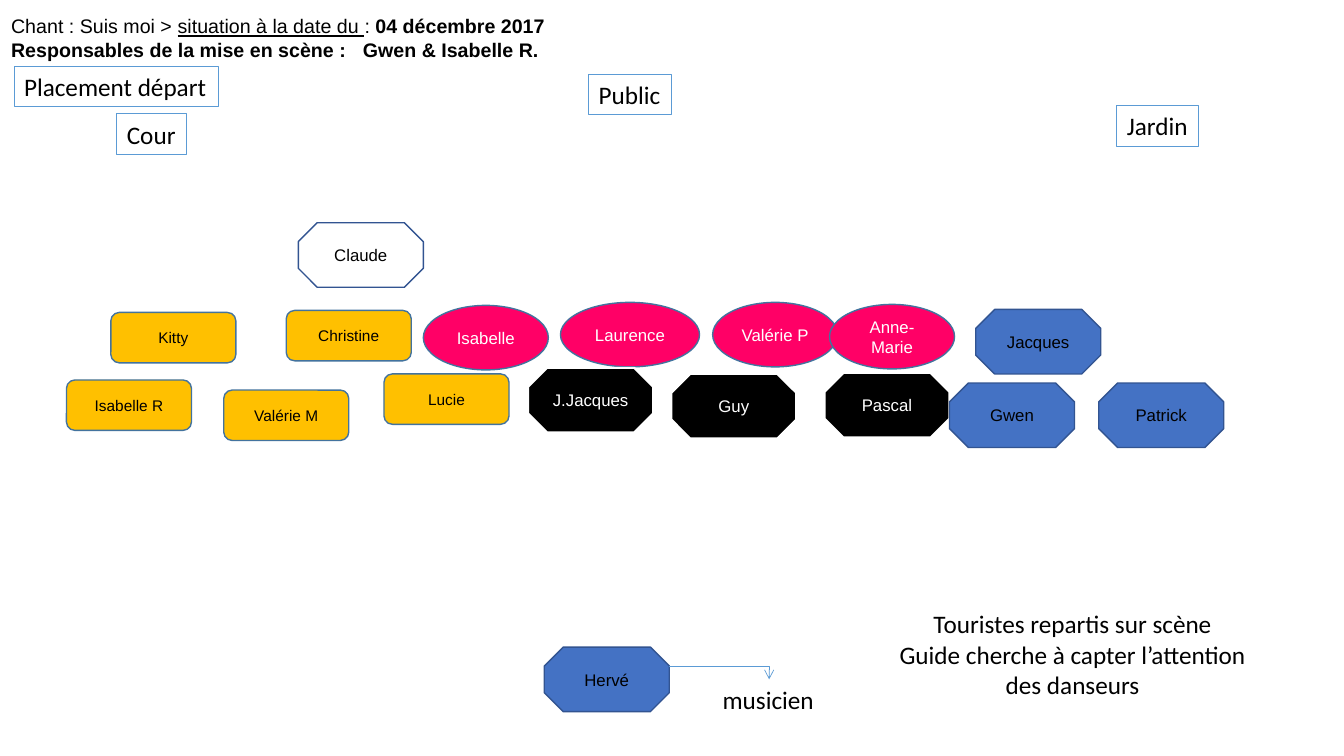
from collections import namedtuple

from lxml.etree import SubElement
from pptx import Presentation
from pptx.dml.color import RGBColor
from pptx.enum.shapes import MSO_CONNECTOR as Connector, MSO_SHAPE as Shape
from pptx.enum.text import MSO_ANCHOR as Anchor, MSO_AUTO_SIZE as AutoSize, PP_ALIGN as Align
from pptx.oxml.ns import qn
from pptx.util import Inches, Pt

COLUMNS, ROWS = 133.33, 75
CELL = Inches(0.1)

Box = namedtuple("Box", "col row cols rows")
Role = namedtuple("Role", "outline rows fill line line_width ink size")

SINGER = Role(Shape.ROUNDED_RECTANGLE, 5, "FFC000", "43739E", 1, "000000", 11)
LADY = Role(Shape.OVAL, 6.4, "FF0066", "43739E", 1, "FFFFFF", 12)
MAN_IN_BLACK = Role(Shape.OCTAGON, 6.4, "000000", "FFFFFF", 1.5, "FFFFFF", 12)
MAN_IN_BLUE = Role(Shape.OCTAGON, 6.4, "4472C4", "325491", 1, "000000", 12)
GUIDE = MAN_IN_BLUE._replace(fill="FFFFFF")
PERFORMER_COLS = 12.4

CAST = [
    (GUIDE, [("Claude", 23, 0)]),
    (SINGER, [("Kitty", 4.4, 8.9), ("Christine", 21.8, 8.7), ("Isabelle R", 0, 15.6),
              ("Valérie M", 15.6, 16.6), ("Lucie", 31.5, 15)]),
    (LADY, [("Isabelle", 35.4, 8.2), ("Laurence", 49, 7.9), ("Valérie P", 64.1, 7.9),
            ("Anne-Marie", 75.7, 8.1)]),
    (MAN_IN_BLACK, [("J.Jacques", 45.8, 14.4), ("Guy", 60, 15), ("Pascal", 75.2, 14.9)]),
    (MAN_IN_BLUE, [("Jacques", 90.2, 8.6), ("Gwen", 87.6, 15.9), ("Patrick", 102.4, 15.9)]),
]
WIDE_COLS = {"Laurence": 13.8}

SIGNS = [
    ("Placement départ", 1.4, 0, 20.3),
    ("Public", 58.4, 0.8, 8.2),
    ("Jardin", 110.8, 3.9, 8.1),
    ("Cour", 11.6, 4.7, 6.9),
]


def color(hex_code):
    return RGBColor.from_string(hex_code)


def grid(*cells):
    return [round(CELL * cell) for cell in cells]


def inside(box, col, row, cols, rows):
    return Box(box.col + col, box.row + row, cols, rows)


def style(paragraph, size, font_name, ink="000000", align=Align.LEFT):
    paragraph.alignment = align
    paragraph.font.size = Pt(size)
    paragraph.font.name = font_name
    paragraph.font.color.rgb = color(ink)


def add_header(slide, box):
    title = slide.shapes.title
    title.left, title.top, title.width, title.height = grid(*box)
    frame = title.text_frame
    frame.auto_size = AutoSize.NONE
    frame.vertical_anchor = Anchor.TOP
    song, directors = frame.paragraphs[0], frame.add_paragraph()
    for words, underline, bold in [("Chant : Suis moi > ", False, False),
                                   ("situation à la date du ", True, False),
                                   (": ", False, False),
                                   ("04 décembre 2017", False, True)]:
        run = song.add_run()
        run.text = words
        run.font.underline = underline
        run.font.bold = bold
    directors.text = "Responsables de la mise en scène :\tGwen & Isabelle R."
    directors.font.bold = True
    for paragraph in frame.paragraphs:
        style(paragraph, 14, "Arial")
    tabs = SubElement(directors._p.get_or_add_pPr(), qn("a:tabLst"))
    directors._p.pPr.insert(0, tabs)
    SubElement(tabs, qn("a:tab"), pos=str(Inches(3.49)), algn="l")


def add_note(slide, box, lines, align=Align.LEFT, wrap=True):
    note = slide.shapes.add_textbox(*grid(*box))
    frame = note.text_frame
    frame.word_wrap = wrap
    frame.text = "\n".join(lines)
    for paragraph in frame.paragraphs:
        style(paragraph, 18, "Calibri", align=align)
    return note


def add_signs(slide, box):
    for place, col, row, cols in SIGNS:
        sign = add_note(slide, inside(box, col, row, cols, 4), [place], wrap=False)
        sign.line.color.rgb = color("5B9BD5")
        sign.line.width = Pt(0.75)


def add_performer(slide, box, name, role):
    performer = slide.shapes.add_shape(role.outline, *grid(*box))
    performer.shadow.inherit = False
    performer.fill.solid()
    performer.fill.fore_color.rgb = color(role.fill)
    performer.line.color.rgb = color(role.line)
    performer.line.width = Pt(role.line_width)
    frame = performer.text_frame
    frame.text = name
    frame.vertical_anchor = Anchor.MIDDLE
    style(frame.paragraphs[0], role.size, "Arial", role.ink, Align.CENTER)


def add_cast(slide, box):
    for role, performers in CAST:
        for name, col, row in performers:
            cols = WIDE_COLS.get(name, PERFORMER_COLS)
            add_performer(slide, inside(box, col, row, cols, role.rows), name, role)


def add_musician(slide, box):
    add_performer(slide, inside(box, 0, 0, PERFORMER_COLS, MAN_IN_BLUE.rows),
                  "Hervé", MAN_IN_BLUE)
    add_note(slide, inside(box, 16.7, 3.2, 11.2, 4), ["musicien"], wrap=False)
    start = box.col + PERFORMER_COLS, box.row + 1.9
    end = box.col + 22.3, box.row + 3.2
    arrow = slide.shapes.add_connector(Connector.ELBOW, *grid(*start, *end))
    arrow.line.color.rgb = color("5B9BD5")
    arrow.line.width = Pt(0.5)
    properties = arrow._element.spPr
    properties.find(qn("a:prstGeom")).set("prst", "bentConnector2")
    SubElement(properties.find(qn("a:ln")), qn("a:tailEnd"), type="arrow")
    SubElement(properties, qn("a:effectLst"))


def main():
    deck = Presentation()
    deck.slide_width, deck.slide_height = grid(COLUMNS, ROWS)
    slide = deck.slides.add_slide(deck.slide_layouts.get_by_name("Title Only"))
    add_header(slide, Box(0.1, 0.9, 55.5, 5.7))
    add_signs(slide, Box(0, 6.6, COLUMNS, 8.7))
    add_cast(slide, Box(6.6, 22.1, 114.8, 21.6))
    add_musician(slide, Box(54, 64.2, 27.9, 7.2))
    add_note(slide, Box(88, 59.9, 36.8, 10.1),
             ["Touristes repartis sur scène",
              "Guide cherche à capter l’attention des danseurs"], Align.CENTER)
    deck.save("out.pptx")


if __name__ == "__main__":
    main()
